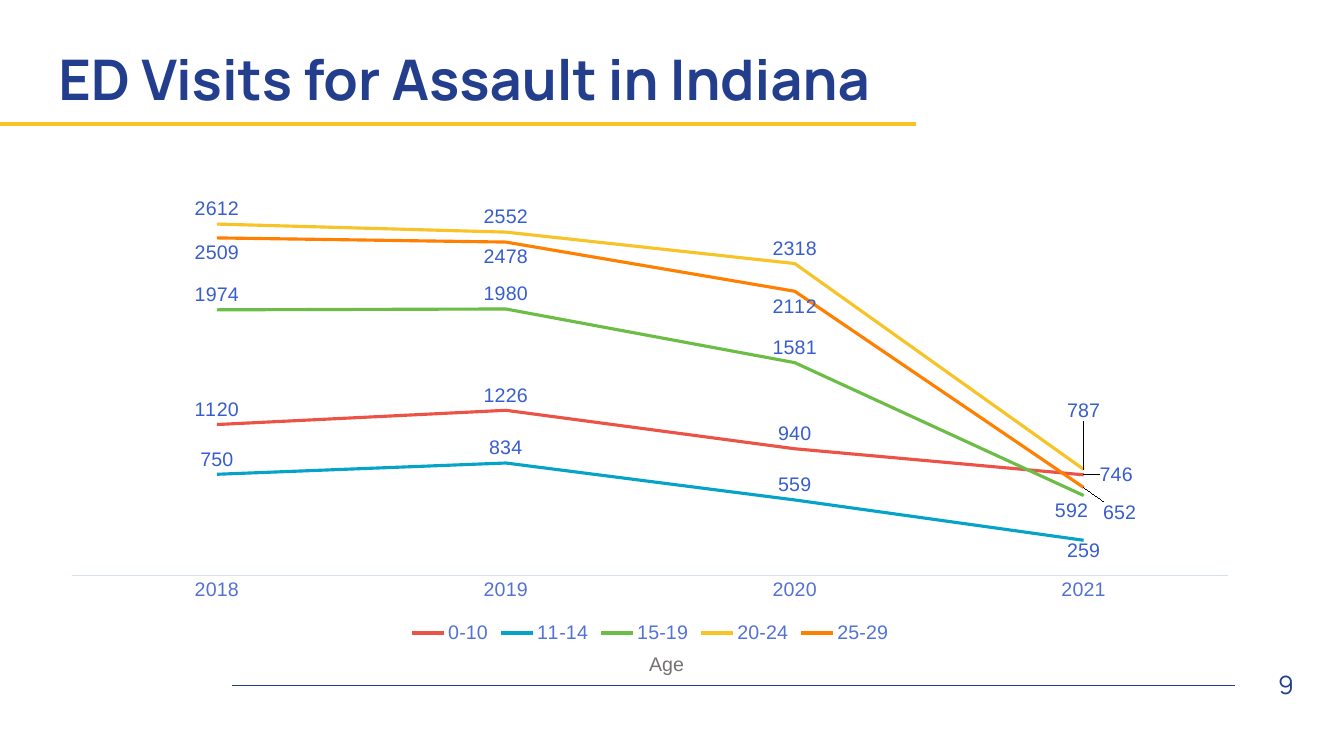
from lxml import etree
from pptx import Presentation
from pptx.chart.data import CategoryChartData
from pptx.dml.color import RGBColor
from pptx.enum import chart as charts, shapes, text
from pptx.oxml import ns, parse_xml
from pptx.util import Inches, Pt

NAVY = RGBColor(0x24, 0x3E, 0x8E)
GOLD = RGBColor(0xF7, 0xC3, 0x27)
GREY = RGBColor(0x76, 0x71, 0x71)
AXIS_TEXT = RGBColor(0x53, 0x72, 0xD3)
AXIS_LINE = RGBColor(0xD7, 0xDF, 0xF5)
LABEL_BLUE = RGBColor(0x38, 0x5D, 0xCD)
RED = RGBColor(0xEB, 0x53, 0x47)
TEAL = RGBColor(0x06, 0xA3, 0xC9)
GREEN = RGBColor(0x6C, 0xBD, 0x45)
ORANGE = RGBColor(0xFF, 0x7F, 0x00)

ABOVE = charts.XL_LABEL_POSITION.ABOVE
BELOW = charts.XL_LABEL_POSITION.BELOW
RIGHT = charts.XL_LABEL_POSITION.RIGHT

YEARS = ["2018", "2019", "2020", "2021"]
# age group, visits, colour, label side, side of the last label, its shift (share of chart size)
AGE_GROUPS = [
    ("0-10", (1120, 1226, 940, 746), RED, ABOVE, RIGHT, (0.01, 0)),
    ("11-14", (750, 834, 559, 259), TEAL, ABOVE, BELOW, (0, -0.01)),
    ("15-19", (1974, 1980, 1581, 592), GREEN, ABOVE, BELOW, (-0.01, 0)),
    ("20-24", (2612, 2552, 2318, 787), GOLD, ABOVE, ABOVE, (0, -0.09)),
    ("25-29", (2509, 2478, 2112, 652), ORANGE, BELOW, BELOW, (0.03, 0.02)),
]


def style_font(font, size, color, name="Arial", bold=False):
    font.size, font.name, font.bold = Pt(size), name, bold
    font.color.rgb = color


def manual_layout(**settings):
    """Return a c:layout element with the given manual settings."""
    items = "".join(f'<c:{key} val="{value}"/>' for key, value in settings.items())
    return parse_xml(f'<c:layout {ns.nsdecls("c")}><c:manualLayout>{items}'
                     '</c:manualLayout></c:layout>')


def add_text(page, words, left, top, width, height, size, color, name="Arial", bold=False,
             anchor=text.MSO_ANCHOR.TOP, align=text.PP_ALIGN.LEFT, spacing=1.0):
    box = page.shapes.add_textbox(Inches(left), Inches(top), Inches(width), Inches(height))
    frame = box.text_frame
    frame.word_wrap = True
    frame.vertical_anchor = anchor
    para = frame.paragraphs[0]
    para.text, para.alignment, para.line_spacing = words, align, spacing
    style_font(para.font, size, color, name, bold)


def add_rule(page, left, right, top, color, weight):
    rule = page.shapes.add_connector(shapes.MSO_CONNECTOR.STRAIGHT, Inches(left), Inches(top),
                                     Inches(right), Inches(top))
    rule.line.color.rgb, rule.line.width = color, Pt(weight)
    etree.SubElement(rule._element.spPr, ns.qn("a:effectLst"))


def add_header(page, left, top, width, height):
    add_rule(page, -0.11, 9.09, top + height, GOLD, 3)
    add_text(page, "ED Visits for Assault in Indiana", left, top, width, height, 40, NAVY,
             "Manrope", True, text.MSO_ANCHOR.MIDDLE, spacing=0.9)


def add_footer(page, left, top, width):
    right = left + width
    add_rule(page, left, right, top, NAVY, 1)
    add_text(page, "9", right, top - 0.21, 0.68, 0.4, 18, NAVY, "Manrope",
             anchor=text.MSO_ANCHOR.MIDDLE, align=text.PP_ALIGN.RIGHT)


def style_series(series, color, side, last_side, shift):
    series.smooth = False
    series.marker.style = charts.XL_MARKER_STYLE.NONE
    series.format.line.color.rgb, series.format.line.width = color, Pt(2.25)
    labels = series.data_labels
    labels.show_value, labels.position = True, side
    style_font(labels.font, 14, LABEL_BLUE)
    last_label = series.points[len(YEARS) - 1].data_label
    style_font(last_label.font, 14, LABEL_BLUE)
    last_label.position = last_side
    label_xml = series._element.xpath("c:dLbls/c:dLbl")[0]
    label_xml.insert(1, manual_layout(x=shift[0], y=shift[1]))


def add_visits_chart(page, left, top, width, height):
    data = CategoryChartData()
    data.categories = YEARS
    for name, visits, *_ in AGE_GROUPS:
        data.add_series(name, visits)
    chart = page.shapes.add_chart(charts.XL_CHART_TYPE.LINE, Inches(left), Inches(top),
                                  Inches(width), Inches(height), data).chart
    style_font(chart.font, 10, NAVY)
    chart.has_title = False
    chart.plots[0].vary_by_categories = False

    chart.has_legend = True
    chart.legend.position = charts.XL_LEGEND_POSITION.BOTTOM
    chart.legend.include_in_layout = False
    style_font(chart.legend.font, 14, AXIS_TEXT)

    years = chart.category_axis
    years.major_tick_mark = years.minor_tick_mark = charts.XL_TICK_MARK.NONE
    years.format.line.color.rgb, years.format.line.width = AXIS_LINE, Pt(0.75)
    style_font(years.tick_labels.font, 14, AXIS_TEXT)
    counts = chart.value_axis
    counts.minimum_scale, counts.maximum_scale = 0, 3000
    counts.has_major_gridlines = False
    counts.visible = False

    for series, (_, _, *style) in zip(chart.plots[0].series, AGE_GROUPS):
        style_series(series, *style)

    plot_area = chart._chartSpace.chart.plotArea
    for old_layout in plot_area.findall(ns.qn("c:layout")):
        plot_area.remove(old_layout)
    plot_area.insert(0, manual_layout(layoutTarget="inner", xMode="edge", yMode="edge",
                                      x=0.02, y=0.02, w=0.96, h=0.83))
    add_text(page, "Age", left + 5.86, top + height - 0.01, 0.66, 0.34, 14, GREY)


def main():
    deck = Presentation()
    deck.slide_width, deck.slide_height = Inches(13.33), Inches(7.5)
    page = deck.slides.add_slide(deck.slide_layouts[6])
    add_header(page, 0.48, 0.4, 11.94, 0.83)
    add_visits_chart(page, 0.48, 1.61, 11.94, 4.82)
    add_footer(page, 2.3, 6.8, 9.95)
    deck.save("out.pptx")


if __name__ == "__main__":
    main()
